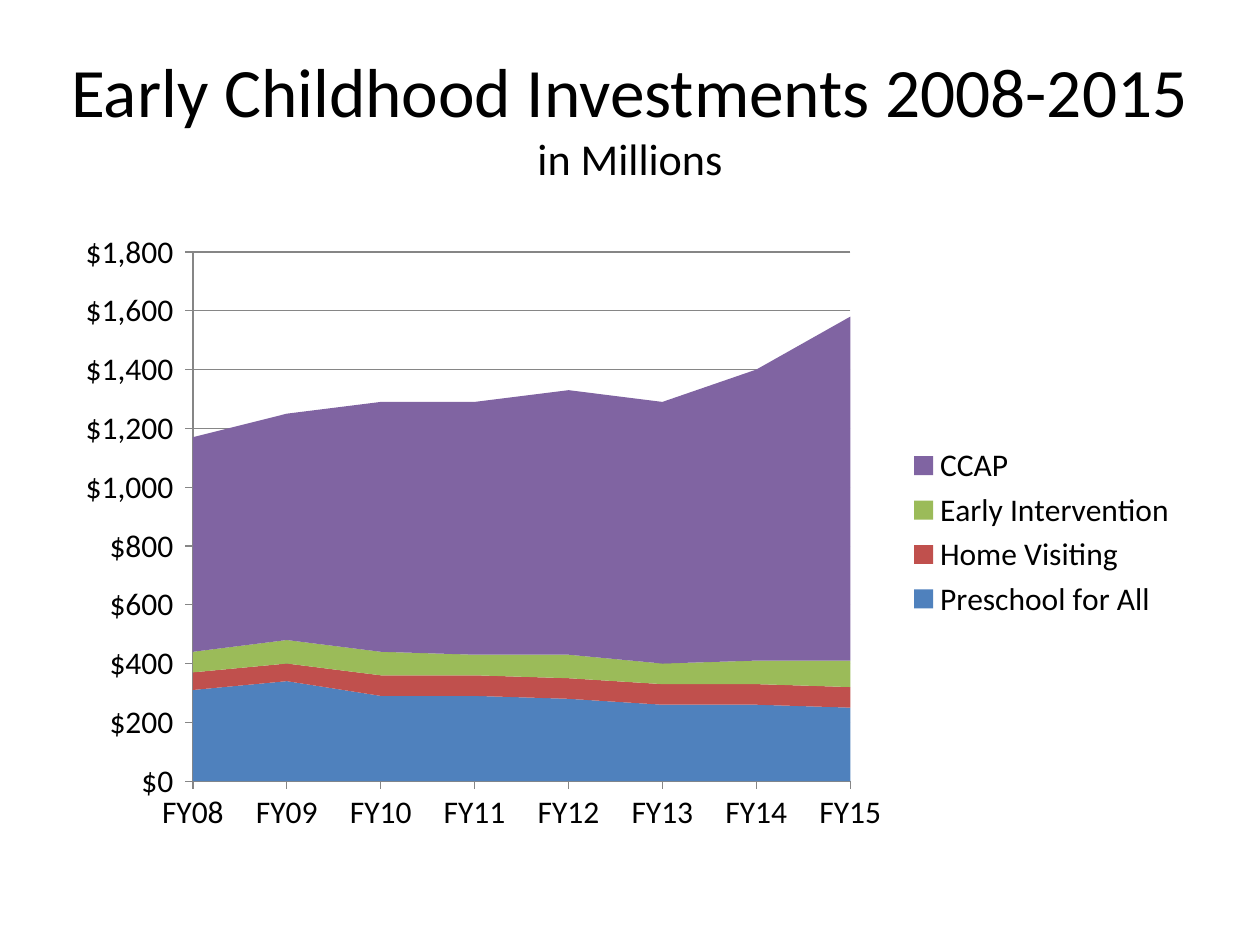
from pptx import Presentation
from pptx.chart.data import CategoryChartData as ChartData
from pptx.dml.color import RGBColor
from pptx.enum.chart import XL_CHART_TYPE as Kind, XL_LEGEND_POSITION as Side
from pptx.enum.chart import XL_TICK_MARK as Tick
from pptx.enum.text import MSO_ANCHOR as Anchor, PP_ALIGN as Align
from pptx.util import Inches, Pt

FONT = "Calibri"
BLACK = RGBColor(0x00, 0x00, 0x00)
GRAY = RGBColor(0x86, 0x86, 0x86)
BLUE = RGBColor(0x4F, 0x81, 0xBD)
RED = RGBColor(0xC0, 0x50, 0x4D)
GREEN = RGBColor(0x9B, 0xBB, 0x59)
PURPLE = RGBColor(0x80, 0x64, 0xA2)

YEARS = [f"FY{year:02}" for year in range(8, 16)]
FUNDS = [
    ("Preschool for All", BLUE, (310, 340, 290, 290, 280, 260, 260, 250)),
    ("Home Visiting", RED, (60, 60, 70, 70, 70, 70, 70, 70)),
    ("Early Intervention ", GREEN, (70, 80, 80, 70, 80, 70, 80, 90)),
    ("CCAP", PURPLE, (730, 770, 850, 860, 900, 890, 990, 1170)),
]
MONEY = '"$"#,##0_);[Red]\\("$"#,##0\\)'


def style(font, size, color=BLACK):
    font.name, font.size, font.bold = FONT, Pt(size), False
    font.color.rgb = color


def write(para, text, size, color=BLACK):
    run = para.add_run()
    run.text = text
    style(run.font, size, color)


def add_title(slide, left, top, width, height):
    title = slide.shapes.title
    title.left, title.top = Inches(left), Inches(top)
    title.width, title.height = Inches(width), Inches(height)
    frame = title.text_frame
    frame.word_wrap = True
    frame.vertical_anchor = Anchor.MIDDLE
    para = frame.paragraphs[0]
    para.alignment = Align.CENTER
    write(para, "Early Childhood Investments 2008-2015", size=39.6)
    para.add_line_break()
    write(para, "in Millions", size=25.2)


def set_axis(axis):
    axis.major_tick_mark = Tick.OUTSIDE
    axis.minor_tick_mark = Tick.NONE
    axis.format.line.color.rgb = GRAY
    axis.format.line.width = Pt(0.75)
    style(axis.tick_labels.font, 18)


def add_areas(slide, left, top, width, height):
    data = ChartData(number_format=MONEY)
    data.categories = YEARS
    for name, _, values in FUNDS:
        data.add_series(name, values)
    chart = slide.shapes.add_chart(
        Kind.AREA_STACKED, Inches(left), Inches(top),
        Inches(width), Inches(height), data).chart
    style(chart.font, 18)
    chart.has_title = False
    chart.has_legend = True
    chart.legend.position = Side.RIGHT
    chart.legend.include_in_layout = False
    style(chart.legend.font, 18)

    plot = chart.plots[0]
    plot.vary_by_categories = False
    for series, (_, color, _) in zip(plot.series, FUNDS):
        series.format.fill.solid()
        series.format.fill.fore_color.rgb = color

    years, money = chart.category_axis, chart.value_axis
    set_axis(years)
    set_axis(money)
    years.has_major_gridlines = False
    money.minimum_scale, money.maximum_scale = 0, 1800
    money.major_unit = 200
    money.has_major_gridlines = True
    money.major_gridlines.format.line.color.rgb = GRAY
    money.major_gridlines.format.line.width = Pt(0.75)
    money.tick_labels.number_format = MONEY
    money.tick_labels.number_format_is_linked = False
    # The areas start right at the value axis
    for cross in chart.element.xpath(".//c:valAx/c:crossBetween"):
        cross.set("val", "midCat")


def main():
    deck = Presentation()
    deck.slide_width, deck.slide_height = Inches(10), Inches(7.5)
    slide = deck.slides.add_slide(deck.slide_layouts[5])
    add_title(slide, 0.25, 0.3, 9.5, 1.25)
    add_areas(slide, 0.5, 1.75, 9, 4.95)
    deck.save("out.pptx")


if __name__ == "__main__":
    main()
